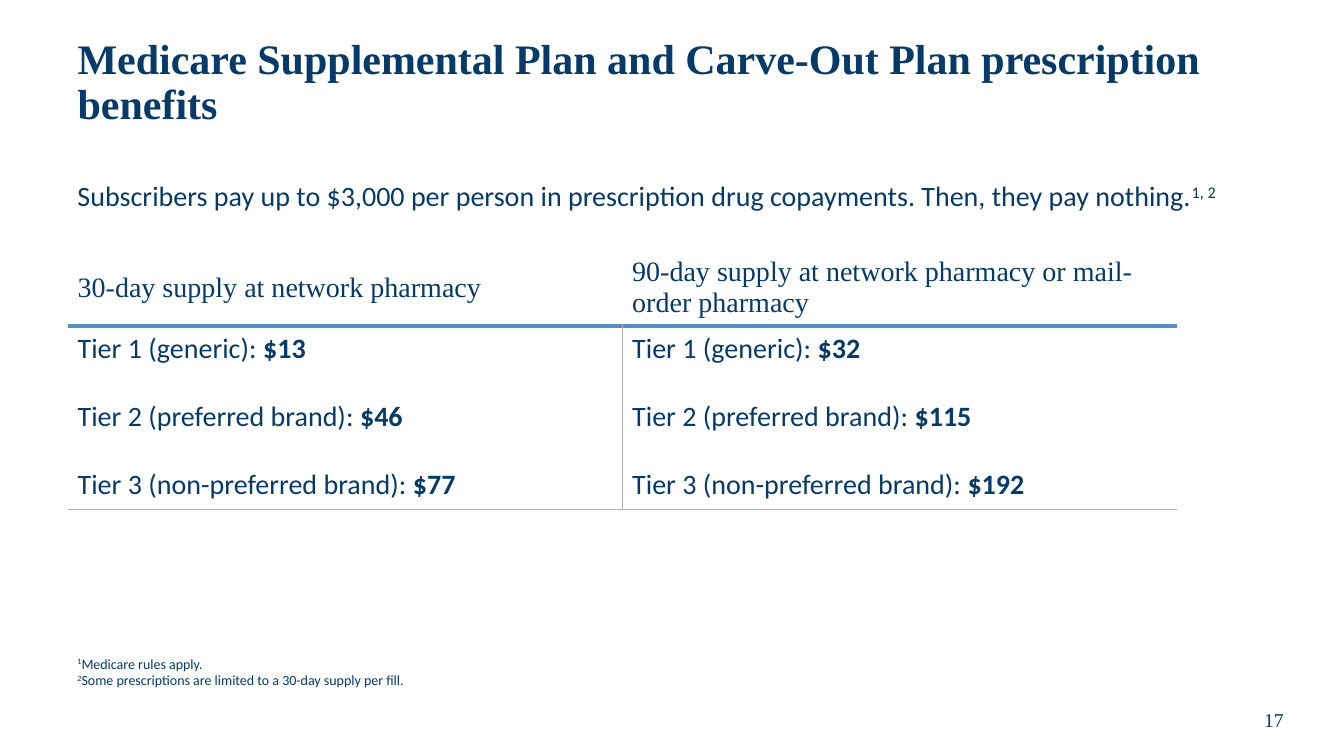
from lxml import etree
from pptx import Presentation
from pptx.dml.color import RGBColor
from pptx.enum.text import MSO_ANCHOR, MSO_AUTO_SIZE, PP_ALIGN
from pptx.oxml.ns import qn
from pptx.util import Inches, Pt

LEFT, CENTER = PP_ALIGN.LEFT, PP_ALIGN.CENTER
TOP, MIDDLE = MSO_ANCHOR.TOP, MSO_ANCHOR.MIDDLE
NO_AUTOFIT = MSO_AUTO_SIZE.NONE

COLORS = {"navy": "063A68", "blue": "568EC1", "gray": "B2B2B2"}
SERIF, SANS = "Times New Roman", "Calibri"

TITLE = "Medicare Supplemental Plan and Carve-Out Plan prescription benefits"
INTRO = [[("Subscribers pay up to $3,000 per person in prescription drug copayments. "
           "Then, they pay nothing.", ""), ("1, 2", "super")]]
TIERS = ["Tier 1 (generic): ", "Tier 2 (preferred brand): ", "Tier 3 (non-preferred brand): "]
SUPPLIES = [
    ("30-day supply at network pharmacy", ["$13", "$46", "$77"]),
    ("90-day supply at network pharmacy or mail-order pharmacy", ["$32", "$115", "$192"]),
]
FOOTNOTES = [
    [("1", "super"), ("Medicare rules apply.", "")],
    [("2", "super"), ("Some prescriptions are limited to a 30-day supply per fill.", "")],
]
PAGE_NUMBER = [[("17", "")]]

SLIDE_WIDTH, SLIDE_HEIGHT = 13.33, 7.5
MARGIN = 0.67
CONTENT_WIDTH = 12
COLUMN_WIDTH = 5.5
ROW_HEIGHTS = [0.7, 1.82]
TIER_GAP = 24.4
HEAD_RULE = (COLORS["blue"], 3)
THIN_RULE = (COLORS["gray"], 0.5)


def write(frame, lines, size, font, align=LEFT, spacing=None, gap=0):
    for index, line in enumerate(lines):
        para = frame.paragraphs[0] if index == 0 else frame.add_paragraph()
        para.alignment = align
        para.line_spacing = spacing
        para.space_before = Pt(gap if index else 0)
        for text, style in line:
            span = para.add_run()
            span.text = text
            span.font.size = Pt(size)
            span.font.name = font
            span.font.bold = style == "bold"
            span.font.color.rgb = RGBColor.from_string(COLORS["navy"])
            if style == "super":
                span._r.get_or_add_rPr().set("baseline", "30000")


def add_text(page, place, lines, size, font, anchor=TOP, **layout):
    box = page.shapes.add_textbox(*map(Inches, place))
    box.text_frame.word_wrap = True
    box.text_frame.vertical_anchor = anchor
    write(box.text_frame, lines, size, font, **layout)


def set_borders(cell, rules):
    properties = cell._tc.get_or_add_tcPr()
    for side in "LRTB":
        line = etree.SubElement(properties, qn(f"a:ln{side}"))
        if side in rules:
            color, width = rules[side]
            line.set("w", str(Pt(width)))
            fill = etree.SubElement(line, qn("a:solidFill"))
            etree.SubElement(fill, qn("a:srgbClr")).set("val", color)
        else:
            etree.SubElement(line, qn("a:noFill"))


def add_title(page):
    title = page.shapes.title
    title.left, title.top = Inches(MARGIN), Inches(0.25)
    title.width, title.height = Inches(CONTENT_WIDTH), Inches(1.15)
    title.text_frame.auto_size = NO_AUTOFIT
    title.text_frame.word_wrap = True
    title.text_frame.vertical_anchor = MIDDLE
    write(title.text_frame, [[(TITLE, "bold")]], 30, SERIF, spacing=0.9)


def add_copayments(page):
    place = (MARGIN, 2.47, COLUMN_WIDTH * len(SUPPLIES), sum(ROW_HEIGHTS))
    table = page.shapes.add_table(len(ROW_HEIGHTS), len(SUPPLIES), *map(Inches, place)).table
    table.horz_banding = False
    for row, height in zip(table.rows, ROW_HEIGHTS):
        row.height = Inches(height)
    for column, (heading, prices) in enumerate(SUPPLIES):
        table.columns[column].width = Inches(COLUMN_WIDTH)
        head, body = table.cell(0, column), table.cell(1, column)
        head.vertical_anchor = MIDDLE
        write(head.text_frame, [[(heading, "")]], 20, SERIF)
        lines = [[(tier, ""), (price, "bold")] for tier, price in zip(TIERS, prices)]
        write(body.text_frame, lines, 20, SANS, gap=TIER_GAP)
        inner_side = "R" if column == 0 else "L"
        set_borders(head, {"B": HEAD_RULE})
        set_borders(body, {"T": HEAD_RULE, "B": THIN_RULE, inner_side: THIN_RULE})
        head.fill.background()
        body.fill.background()


def main():
    deck = Presentation()
    deck.slide_width, deck.slide_height = Inches(SLIDE_WIDTH), Inches(SLIDE_HEIGHT)
    page = deck.slides.add_slide(deck.slide_layouts[5])
    add_title(page)
    add_text(page, (MARGIN, 1.76, CONTENT_WIDTH, 0.5), INTRO, 20, SANS, spacing=0.9)
    add_copayments(page)
    add_text(page, (MARGIN, 6.45, CONTENT_WIDTH, 0.44), FOOTNOTES, 10, SANS)
    add_text(page, (12.05, 6.89, 1.17, 0.5), PAGE_NUMBER, 14, SERIF, MIDDLE, align=CENTER)
    deck.save("out.pptx")


if __name__ == "__main__":
    main()
